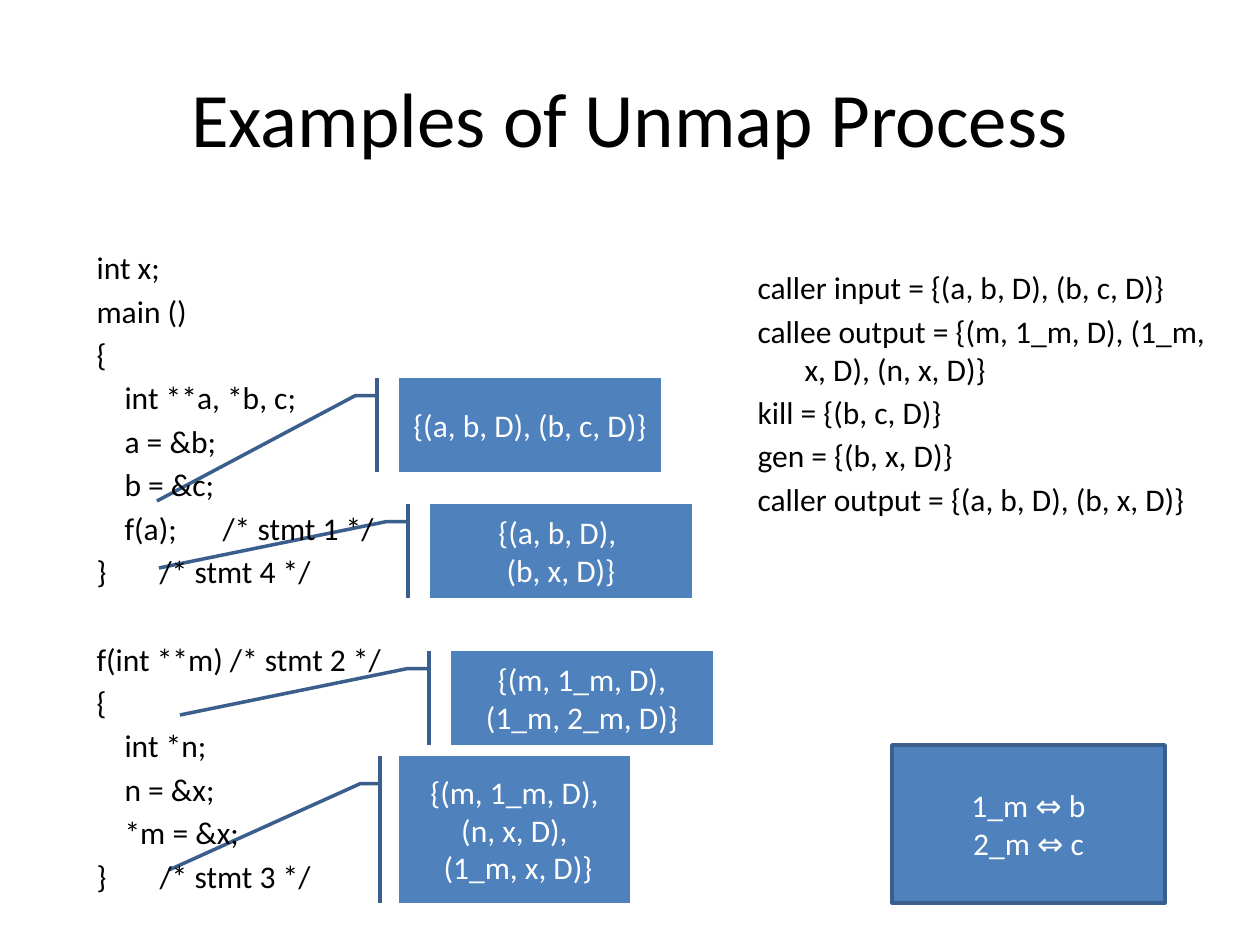
from dataclasses import dataclass

from lxml.etree import SubElement
from pptx import Presentation
from pptx.dml.color import RGBColor
from pptx.enum.shapes import MSO_SHAPE
from pptx.enum.text import MSO_ANCHOR, MSO_AUTO_SIZE, PP_ALIGN
from pptx.oxml.ns import qn
from pptx.util import Emu, Pt

SCALE = 914400 / 126
BLACK, WHITE, BLUE, EDGE = "000000", "FFFFFF", "4F81BD", "3A5F8C"
GAP, LINE = 3.2, 25.2  # space before a paragraph and line pitch, points
STEP, HANG = 28, 47  # code indent and hanging indent, px


@dataclass
class Box:
    left: int
    top: int
    width: int
    height: int


@dataclass
class Note:
    box: Box
    tip: tuple[int, int]
    lines: list[str]


@dataclass
class Code:
    text: str
    depth: int = 0
    tab: int = 0
    gap: float = GAP


def px(size: float) -> Emu:
    return Emu(round(size * SCALE))


def paint(color, value: str) -> None:
    color.rgb = RGBColor.from_string(value)


def style(para, size: int, value: str, align=PP_ALIGN.LEFT) -> None:
    para.alignment = align
    para.font.size = Pt(size)
    para.font.name = "Calibri"
    paint(para.font.color, value)


def place(shape, box: Box) -> None:
    shape.left, shape.top = px(box.left), px(box.top)
    shape.width, shape.height = px(box.width), px(box.height)


def fill_list(body, box: Box, rows: list[Code], hang: int = 0) -> None:
    """Lay out unbulleted rows in a body placeholder."""
    place(body, box)
    frame = body.text_frame
    frame.auto_size = MSO_AUTO_SIZE.NONE
    frame.text = "\n".join(row.text for row in rows)
    for para, row in zip(frame.paragraphs, rows):
        style(para, 18, BLACK)
        para.space_before = Pt(row.gap)
        props = para._p.get_or_add_pPr()
        props.set("marL", str(px(hang)))
        props.set("indent", str(px(row.depth * STEP - hang)))
        SubElement(props, qn("a:buNone"))
        if row.tab:
            tabs = SubElement(props, qn("a:tabLst"))
            SubElement(tabs, qn("a:tab"), pos=str(px(row.tab)), algn="l")


def add_box(slide, kind, box: Box, lines: list[str]):
    shape = slide.shapes.add_shape(kind, 0, 0, 0, 0)
    place(shape, box)
    shape.shadow.inherit = False
    shape.fill.solid()
    paint(shape.fill.fore_color, BLUE)
    paint(shape.line.color, EDGE)
    shape.line.width = Pt(2)
    frame = shape.text_frame
    frame.vertical_anchor = MSO_ANCHOR.MIDDLE
    frame.text = "\n".join(lines)
    for para in frame.paragraphs:
        style(para, 18, WHITE, PP_ALIGN.CENTER)
    return shape


def add_note(slide, note: Note) -> None:
    """Draw a callout whose bent line ends at the tip."""
    box = note.box
    shape = add_box(slide, MSO_SHAPE.LINE_CALLOUT_2_ACCENT_BAR, box, note.lines)
    x, y = note.tip
    bend = [0.1875, -0.0833, 0.1875, -0.1667]
    end = [(y - box.top) / box.height, (x - box.left) / box.width]
    for i, value in enumerate(bend + end):
        shape.adjustments[i] = value


CODE = [
    Code("int x;"),
    Code("main ()"),
    Code("{"),
    Code("int **a, *b, c;", 1),
    Code("a = &b;", 1),
    Code("b = &c;", 1),
    Code("f(a);\t/* stmt 1 */", 1, 116),
    Code("}\t/* stmt 4 */", tab=109),
    Code("f(int **m) /* stmt 2 */", gap=GAP + LINE),
    Code("{"),
    Code("int *n;", 1),
    Code("n = &x;", 1),
    Code("*m = &x;", 1),
    Code("}\t/* stmt 3 */", tab=109),
]
SETS = [
    Code("caller input = {(a, b, D), (b, c, D)}"),
    Code("callee output = {(m, 1_m, D), (1_m, x, D), (n, x, D)}"),
    Code("kill = {(b, c, D)}"),
    Code("gen = {(b, x, D)}"),
    Code("caller output = {(a, b, D), (b, x, D)}"),
]
NOTES = [
    Note(Box(399, 378, 262, 94), (157, 501), ["{(a, b, D), (b, c, D)}"]),
    Note(Box(430, 504, 262, 94), (159, 568), ["{(a, b, D), ", "(b, x, D)}"]),
    Note(Box(399, 756, 231, 147), (169, 870),
         ["{(m, 1_m, D), (n, x, D),", " (1_m, x, D)}"]),
    Note(Box(451, 651, 262, 94), (180, 715), ["{(m, 1_m, D), (1_m, 2_m, D)}"]),
]


def main() -> None:
    deck = Presentation()
    deck.slide_width, deck.slide_height = px(1260), px(945)
    slide = deck.slides.add_slide(deck.slide_layouts[3])

    # Title
    title, code, sets = slide.placeholders
    place(title, Box(63, 38, 1134, 157))
    title.text_frame.text = "Examples of Unmap Process"
    style(title.text_frame.paragraphs[0], 44, BLACK, PP_ALIGN.CENTER)

    # Callouts and name mapping
    for note in NOTES:
        add_note(slide, note)
    add_box(slide, MSO_SHAPE.RECTANGLE, Box(892, 745, 273, 158),
            ["1_m ⇔ b", "2_m ⇔ c"])

    # Program and result sets, in front of the callout lines
    fill_list(code, Box(84, 242, 410, 703), CODE)
    fill_list(sets, Box(745, 262, 494, 315), SETS, HANG)
    for body in (code, sets):
        slide.shapes._spTree.append(body._element)

    deck.save("out.pptx")


if __name__ == "__main__":
    main()
